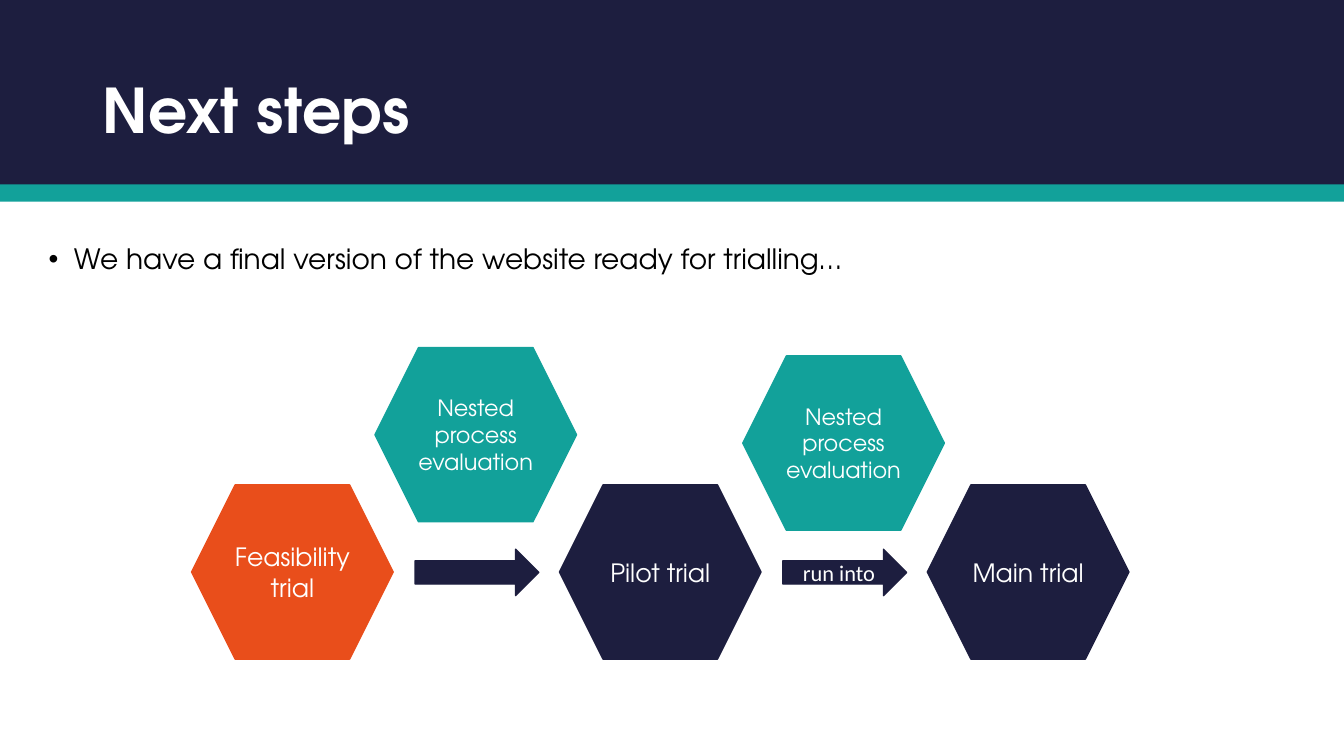
from dataclasses import dataclass

from pptx import Presentation
from pptx.dml.color import RGBColor
from pptx.enum.shapes import MSO_SHAPE
from pptx.enum.text import MSO_ANCHOR, MSO_AUTO_SIZE, PP_ALIGN
from pptx.oxml import parse_xml
from pptx.oxml.ns import nsdecls
from pptx.util import Cm, Pt

COLOURS = {
    "navy": "1D1E3F",
    "teal": "12A19A",
    "orange": "E94E1B",
    "white": "FFFFFF",
    "black": "000000",
}
HEADING_FONT = "TeX Gyre Adventor"
PAGE_WIDTH, PAGE_HEIGHT = 33.87, 19.05
STAGE_STEP = 9.27
HEXAGON_SIZE = (5.08, 4.39)
ARROW_SIZE = (3.12, 1.17)
STAGE_LEFT, STAGE_TOP = 4.83, 12.22
NESTED_LEFT = 9.45
ARROW_LEFT, ARROW_TOP = 10.46, 13.84


@dataclass
class Step:
    kind: MSO_SHAPE
    left: float
    top: float
    colour: str
    text: str = ""
    size: int = 18
    font: str = HEADING_FONT


def stage(column, colour, text):
    return Step(MSO_SHAPE.HEXAGON, STAGE_LEFT + column * STAGE_STEP, STAGE_TOP, colour, text)


def evaluation(column, top):
    left = NESTED_LEFT + column * STAGE_STEP
    return Step(MSO_SHAPE.HEXAGON, left, top, "teal", "Nested process evaluation", 16)


def arrow(column, text=""):
    left = ARROW_LEFT + column * STAGE_STEP
    return Step(MSO_SHAPE.RIGHT_ARROW, left, ARROW_TOP, "navy", text, 16, "Calibri")


STEPS = [
    stage(1, "navy", "Pilot trial"),
    stage(2, "navy", "Main trial"),
    stage(0, "orange", "Feasibility trial"),
    arrow(0),
    arrow(1, "run into"),
    evaluation(1, 8.97),
    evaluation(0, 8.76),
]


def rgb(name: str) -> RGBColor:
    return RGBColor.from_string(COLOURS[name])


def format_spans(paragraph, size: int, colour: str, font: str = HEADING_FONT,
                 bold: bool = False) -> None:
    for span in paragraph.runs:
        span.font.size = Pt(size)
        span.font.name = font
        span.font.bold = bold
        span.font.color.rgb = rgb(colour)


def place(box, left: float, top: float, width: float, height: float) -> None:
    box.left, box.top, box.width, box.height = map(Cm, (left, top, width, height))


def add_band(page, top: float, height: float, colour: str, layer: int) -> None:
    """Draw a full-width band and move it behind the placeholders."""
    band = page.shapes.add_shape(MSO_SHAPE.RECTANGLE, 0, Cm(top), Cm(PAGE_WIDTH), Cm(height))
    band.shadow.inherit = False
    band.fill.solid()
    band.fill.fore_color.rgb = rgb(colour)
    band.line.fill.background()
    page.shapes._spTree.insert(2 + layer, band._element)


def fill_placeholder(box, text: str, size: int, colour: str, anchor: MSO_ANCHOR,
                     bold: bool = False):
    frame = box.text_frame
    frame.text = text
    frame.word_wrap = True
    frame.auto_size = MSO_AUTO_SIZE.NONE
    frame.vertical_anchor = anchor
    paragraph = frame.paragraphs[0]
    paragraph.alignment = PP_ALIGN.LEFT
    paragraph.line_spacing = 0.9
    paragraph.space_before = Pt(0)
    format_spans(paragraph, size, colour, bold=bold)
    return paragraph


def add_bullet(paragraph) -> None:
    properties = paragraph._p.get_or_add_pPr()
    properties.set("marL", str(Cm(0.64)))
    properties.set("indent", str(-Cm(0.64)))
    namespace = nsdecls("a")
    properties.append(parse_xml(f'<a:buFont {namespace} typeface="Arial"/>'))
    properties.append(parse_xml(f'<a:buChar {namespace} char="•"/>'))


def add_step(page, step: Step) -> None:
    width, height = HEXAGON_SIZE if step.kind == MSO_SHAPE.HEXAGON else ARROW_SIZE
    shape = page.shapes.add_shape(step.kind, Cm(step.left), Cm(step.top), Cm(width), Cm(height))
    shape.shadow.inherit = False
    shape.fill.solid()
    shape.fill.fore_color.rgb = rgb(step.colour)
    shape.line.color.rgb = rgb(step.colour)
    shape.line.width = Pt(1)
    if step.text:
        frame = shape.text_frame
        frame.text = step.text
        frame.word_wrap = True
        frame.vertical_anchor = MSO_ANCHOR.MIDDLE
        frame.paragraphs[0].alignment = PP_ALIGN.CENTER
        format_spans(frame.paragraphs[0], step.size, "white", step.font)


def main() -> None:
    deck = Presentation()
    deck.slide_width, deck.slide_height = Cm(PAGE_WIDTH), Cm(PAGE_HEIGHT)
    page = deck.slides.add_slide(deck.slide_layouts[1])

    add_band(page, 0, 4.7, "navy", 0)
    add_band(page, 4.65, 0.43, "teal", 1)

    title = page.shapes.title
    place(title, 2.34, 1.02, 29.2, 3.68)
    fill_placeholder(title, "Next steps", 44, "white", MSO_ANCHOR.MIDDLE, bold=True)

    body = page.placeholders[1]
    place(body, 0.97, 6.05, 24.33, 12.73)
    sentence = "We have a final version of the website ready for trialling…"
    add_bullet(fill_placeholder(body, sentence, 20, "black", MSO_ANCHOR.TOP))

    for step in STEPS:
        add_step(page, step)

    deck.save("out.pptx")


if __name__ == "__main__":
    main()
